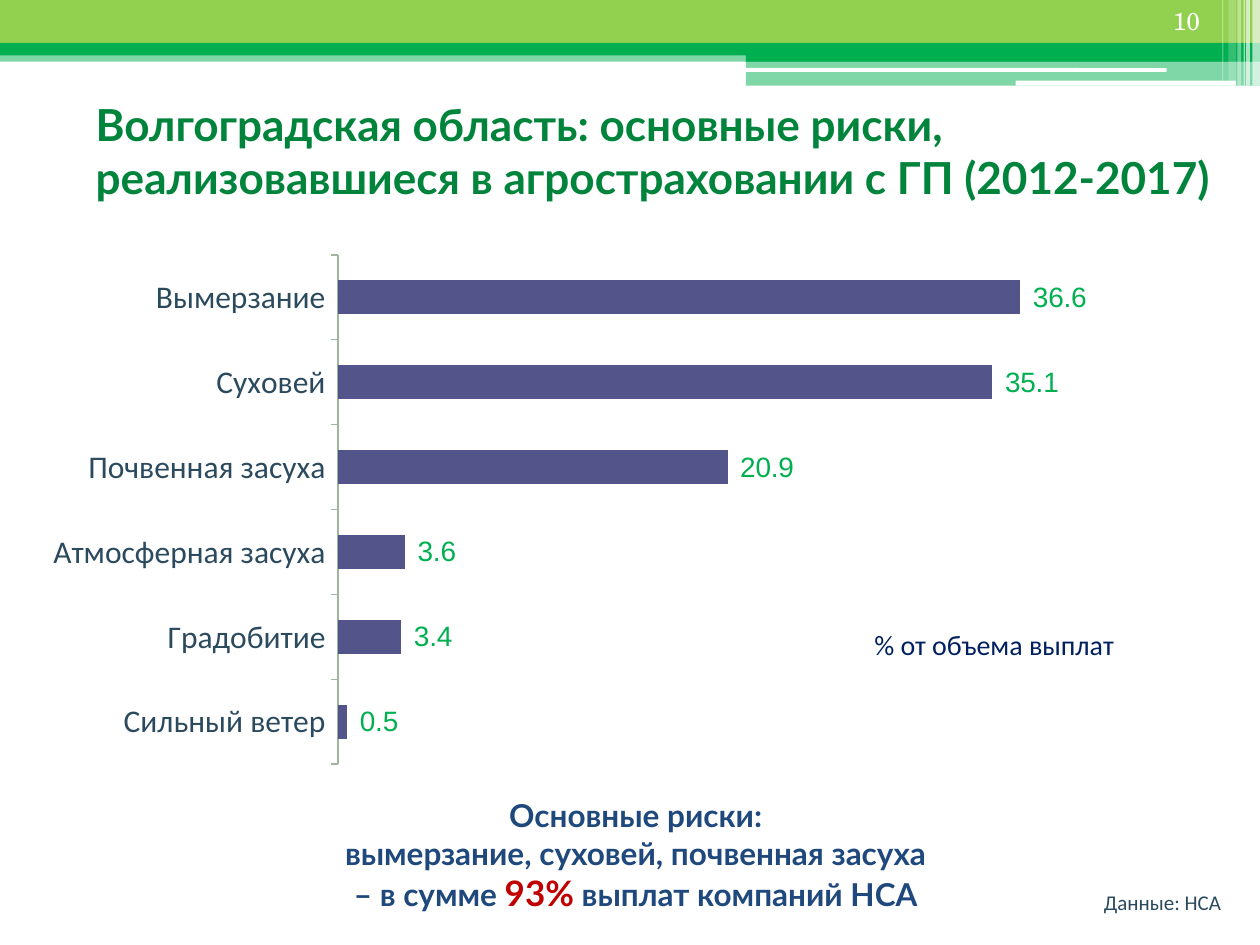
from lxml import etree
from pptx import Presentation
from pptx.chart.data import CategoryChartData
from pptx.dml.color import RGBColor
from pptx.enum.chart import XL_CHART_TYPE, XL_LABEL_POSITION, XL_TICK_LABEL_POSITION, XL_TICK_MARK
from pptx.enum.shapes import MSO_SHAPE
from pptx.enum.text import MSO_ANCHOR, PP_ALIGN
from pptx.oxml import parse_xml
from pptx.oxml.ns import nsdecls, qn
from pptx.util import Inches, Pt


def color(hex_text):
    return RGBColor.from_string(hex_text)


def add_text(para, text, size=18, font="Calibri", fill="000000", bold=False, align=PP_ALIGN.LEFT):
    para.alignment = align
    span = para.add_run()
    span.text = text
    span.font.size = Pt(size)
    span.font.name = font
    span.font.bold = bold
    span.font.color.rgb = color(fill)


deck = Presentation()
deck.slide_width, deck.slide_height = Inches(10), Inches(7.5)
page = deck.slides.add_slide(deck.slide_layouts[5])

# Header bands and stripes: left, top, width, height, fill, opacity in percent
RECT, ROUND = MSO_SHAPE.RECTANGLE, MSO_SHAPE.ROUNDED_RECTANGLE
bands = [
    (RECT, 0, 0.4, 10, 0.09, "00B050", 50),
    (RECT, 0, 0, 10, 0.34, "92D050", 100),
    (RECT, 0, 0.34, 10, 0.1, "00B050", 100),
    (RECT, 5.92, 0.39, 4.08, 0.1, "00B050", 100),
    (RECT, 5.92, 0.48, 4.08, 0.2, "00B050", 50),
    (ROUND, 5.91, 0.54, 3.35, 0.03, "FFFFFF", 100),
    (ROUND, 8.06, 0.64, 1.75, 0.04, "FFFFFF", 100),
    (RECT, 9.94, 0, 0.06, 0.68, "FFFFFF", 65),
    (RECT, 9.89, 0, 0.03, 0.68, "FFFFFF", 65),
    (RECT, 9.87, 0, 0.01, 0.68, "FFFFFF", 60),
    (RECT, 9.82, 0, 0.03, 0.68, "FFFFFF", 40),
    (RECT, 9.75, 0, 0.06, 0.64, "FFFFFF", 20),
    (RECT, 9.7, 0, 0.01, 0.64, "FFFFFF", 30),
]
for kind, left, top, width, height, fill, opacity in bands:
    band = page.shapes.add_shape(kind, Inches(left), Inches(top), Inches(width), Inches(height))
    band.shadow.inherit = False
    band.line.fill.background()
    band.fill.solid()
    band.fill.fore_color.rgb = color(fill)
    if opacity < 100:
        fill_xml = band._element.spPr.find(qn("a:solidFill"))[0]
        etree.SubElement(fill_xml, qn("a:alpha")).set("val", str(opacity * 1000))

# Title
title = page.shapes.title
title.left, title.top, title.width, title.height = Inches(0.66), Inches(0.84), Inches(9.34), Inches(0.71)
title.text_frame.word_wrap = True
title.text_frame.vertical_anchor = MSO_ANCHOR.MIDDLE
add_text(title.text_frame.paragraphs[0],
         "Волгоградская область: основные риски, реализовавшиеся в агростраховании с ГП (2012-2017)",
         size=25.2, font="Lato", fill="00843C", bold=True)

# Bar chart of risks
data = CategoryChartData()
data.categories = ["Сильный ветер", "Градобитие", "Атмосферная засуха",
                   "Почвенная засуха", "Суховей", "Вымерзание"]
data.add_series("Series 1", [0.5, 3.4, 3.6, 20.9, 35.1, 36.6])
chart = page.shapes.add_chart(XL_CHART_TYPE.BAR_CLUSTERED, Inches(0.28), Inches(1.94),
                              Inches(8.58), Inches(4.21), data).chart
chart.has_title = False
chart.has_legend = False
chart.font.size = Pt(18)
chart.font.name = "TeX Gyre Schola"
chart.font.color.rgb = color("00B050")

risks = chart.category_axis
risks.major_tick_mark = XL_TICK_MARK.OUTSIDE
risks.tick_label_position = XL_TICK_LABEL_POSITION.LOW
risks.format.line.color.rgb = color("9DB79D")
risks.format.line.width = Pt(0.75)
risks.tick_labels.font.size = Pt(18)
risks.tick_labels.font.name = "Calibri"
risks.tick_labels.font.color.rgb = color("2B4A5E")
shares = chart.value_axis
shares.minimum_scale, shares.maximum_scale = 0, 40
shares.has_major_gridlines = False
shares.visible = False

plot = chart.plots[0]
plot.gap_width = 150
plot.vary_by_categories = False
bars = plot.series[0].format.fill
bars.solid()
bars.fore_color.rgb = color("53548A")
plot.has_data_labels = True
labels = plot.data_labels
labels.show_value = True
labels.position = XL_LABEL_POSITION.OUTSIDE_END
labels.number_format = "_-#,##0.0_-"
labels.number_format_is_linked = False
labels.font.size = Pt(16)
labels.font.name = "Arial"
labels.font.color.rgb = color("00B050")

# Fixed plot area inside the chart frame
plot_area = chart._chartSpace.chart.plotArea
for old_layout in plot_area.findall(qn("c:layout")):
    plot_area.remove(old_layout)
plot_area.insert(0, parse_xml(
    f'<c:layout {nsdecls("c")}><c:manualLayout><c:layoutTarget val="inner"/>'
    '<c:xMode val="edge"/><c:yMode val="edge"/><c:x val="0.28"/><c:y val="0.02"/>'
    '<c:w val="0.69"/><c:h val="0.96"/></c:manualLayout></c:layout>'))

# Text boxes: place, alignment, paragraphs of (text, format) spans
navy = dict(font="Lato", fill="1F497D", bold=True)
notes = [
    ((6.26, 4.93, 2.68, 0.37), PP_ALIGN.RIGHT,
     [[("% от объема выплат", dict(size=16, fill="002060"))]]),
    ((0.2, 6.27, 9.69, 1.04), PP_ALIGN.CENTER,
     [[("Основные риски:", navy)],
      [("вымерзание, суховей, почвенная засуха", navy)],
      [("– в сумме ", navy),
       ("93%", dict(size=20, font="Lato", fill="C00000", bold=True)),
       (" выплат компаний НСА", navy)]]),
    ((9.21, 0, 0.51, 0.28), PP_ALIGN.LEFT,
     [[("10", dict(size=14, font="TeX Gyre Schola", fill="FFFFFF"))]]),
    ((6.57, 7.01, 3.22, 0.3), PP_ALIGN.RIGHT,
     [[("Данные: НСА", dict(size=12, fill="2B4A5E"))]]),
]
for place, align, paragraphs in notes:
    box = page.shapes.add_textbox(*[Inches(length) for length in place])
    frame = box.text_frame
    frame.word_wrap = True
    for index, spans in enumerate(paragraphs):
        para = frame.add_paragraph() if index else frame.paragraphs[0]
        for text, style in spans:
            add_text(para, text, align=align, **style)

deck.save("out.pptx")
